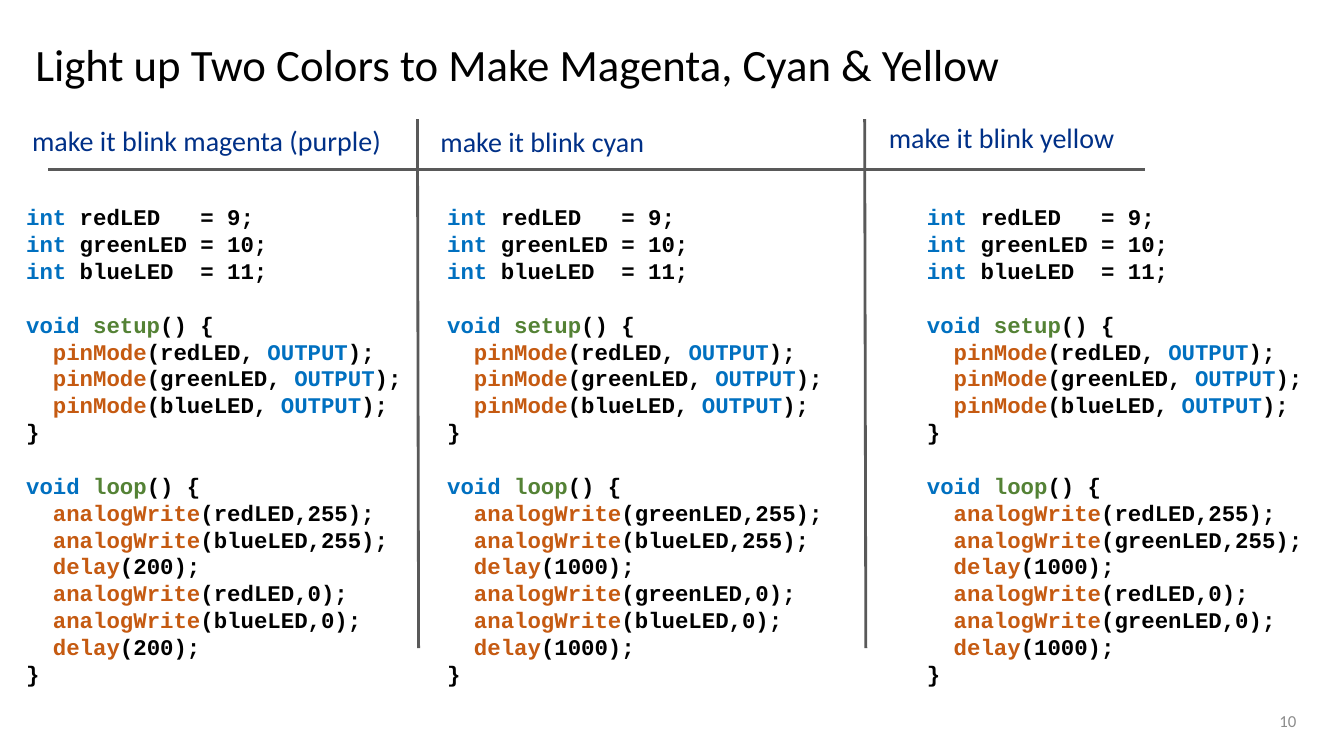
from dataclasses import dataclass
from itertools import groupby

from lxml import etree
from pptx import Presentation
from pptx.dml.color import RGBColor
from pptx.enum.shapes import MSO_CONNECTOR
from pptx.enum.text import MSO_ANCHOR, PP_ALIGN
from pptx.oxml.ns import qn
from pptx.util import Cm, Pt

STRAIGHT = MSO_CONNECTOR.STRAIGHT
TOP, MIDDLE = MSO_ANCHOR.TOP, MSO_ANCHOR.MIDDLE
LEFT, RIGHT = PP_ALIGN.LEFT, PP_ALIGN.RIGHT


@dataclass(frozen=True)
class Theme:
    text_font: str = "Calibri"
    code_font: str = "Courier New"
    title_size: float = 32
    heading_size: float = 20
    code_size: float = 16
    code_pitch: float = 19.2
    number_size: float = 12
    rule_width: float = 2
    black: str = "000000"
    heading: str = "003087"
    number: str = "8C8C8C"
    rule: str = "595959"
    keyword: str = "0070C0"
    function: str = "548235"
    call: str = "C55A11"


@dataclass(frozen=True)
class Box:
    """A region in centimetres."""
    left: float
    top: float
    width: float
    height: float


THEME = Theme()
TOKEN_COLORS = {
    **dict.fromkeys(("int", "void", "OUTPUT"), THEME.keyword),
    **dict.fromkeys(("setup", "loop"), THEME.function),
    **dict.fromkeys(("pinMode", "analogWrite", "delay"), THEME.call),
}

# Heading, heading box, code box, LEDs to light, delay in milliseconds
COLUMNS = (
    ("make it blink magenta (purple)", Box(0.56, 3.0, 9.32, 1.12),
     Box(0.41, 5, 10.46, 12.57), ("redLED", "blueLED"), 200),
    ("make it blink cyan", Box(10.85, 3.02, 6.07, 1.12),
     Box(11.02, 5, 10.39, 12.57), ("greenLED", "blueLED"), 1000),
    ("make it blink yellow", Box(22.15, 2.92, 6.4, 1.12),
     Box(23.11, 5, 10.74, 12.57), ("redLED", "greenLED"), 1000),
)


def add_text_frame(slide, box, anchor=TOP):
    shape = slide.shapes.add_textbox(
        Cm(box.left), Cm(box.top), Cm(box.width), Cm(box.height))
    frame = shape.text_frame
    frame.word_wrap = True
    frame.vertical_anchor = anchor
    return frame


def add_label(slide, box, text, size, color, anchor=TOP, alignment=LEFT):
    paragraph = add_text_frame(slide, box, anchor).paragraphs[0]
    paragraph.text = text
    paragraph.alignment = alignment
    paragraph.font.name = THEME.text_font
    paragraph.font.size = Pt(size)
    paragraph.font.color.rgb = RGBColor.from_string(color)


def add_rule(slide, left, top, right, bottom):
    connector = slide.shapes.add_connector(
        STRAIGHT, Cm(left), Cm(top), Cm(right), Cm(bottom))
    connector.line.color.rgb = RGBColor.from_string(THEME.rule)
    connector.line.width = Pt(THEME.rule_width)
    etree.SubElement(connector._element.spPr, qn("a:effectLst"))


def sketch_sections(leds, delay):
    """Return the sketch as sections of code lines."""
    pins = ("redLED", "greenLED", "blueLED")
    loop = []
    for level in (255, 0):
        loop += [f"  analogWrite({led},{level});" for led in leds]
        loop.append(f"  delay({delay});")
    return (
        [f"int {pin:<8} = {number};" for number, pin in enumerate(pins, 9)],
        ["void setup() {", *(f"  pinMode({pin}, OUTPUT);" for pin in pins), "}"],
        ["void loop() {", *loop, "}"],
    )


def token_color(token):
    return TOKEN_COLORS.get(token, THEME.black)


def add_code_line(paragraph, line, space_before):
    paragraph.line_spacing = Pt(THEME.code_pitch)
    paragraph.space_before = Pt(space_before)
    paragraph.font.name = THEME.code_font
    paragraph.font.size = Pt(THEME.code_size)
    paragraph.font.bold = True
    tokens = ["".join(group) for _, group in groupby(line, str.isalnum)]
    for color, group in groupby(tokens, token_color):
        run = paragraph.add_run()
        run.text = "".join(group)
        run.font.color.rgb = RGBColor.from_string(color)


def add_code(slide, box, sections):
    frame = add_text_frame(slide, box)
    for section_index, section in enumerate(sections):
        for line_index, line in enumerate(section):
            first = section_index == line_index == 0
            paragraph = frame.paragraphs[0] if first else frame.add_paragraph()
            new_section = section_index > 0 and line_index == 0
            add_code_line(paragraph, line, THEME.code_pitch if new_section else 0)


def add_grid(slide, box, dividers, heading_height):
    """Draw the line under the headings and the column dividers."""
    baseline = box.top + heading_height
    add_rule(slide, box.left, baseline, box.left + box.width, baseline)
    for divider in dividers:
        add_rule(slide, divider, box.top, divider + 0.03, box.top + box.height)


def add_column(slide, heading, heading_box, code_box, leds, delay):
    add_label(slide, heading_box, heading, THEME.heading_size, THEME.heading)
    add_code(slide, code_box, sketch_sections(leds, delay))


def main():
    presentation = Presentation()
    presentation.slide_width, presentation.slide_height = Cm(33.87), Cm(19.05)
    slide = presentation.slides.add_slide(presentation.slide_layouts[6])

    # Title
    add_label(slide, Box(0.64, 0.79, 28.58, 1.9),
              "Light up Two Colors to Make Magenta, Cyan & Yellow",
              THEME.title_size, THEME.black)

    # Three sketches, separated by lines
    add_grid(slide, Box(1.22, 3, 27.64, 13.33), (10.52, 21.79), 1.27)
    for column in COLUMNS:
        add_column(slide, *column)

    # Slide number
    add_label(slide, Box(23.93, 17.65, 8.99, 1.02), "10",
              THEME.number_size, THEME.number, MIDDLE, RIGHT)

    presentation.save("out.pptx")


if __name__ == "__main__":
    main()
